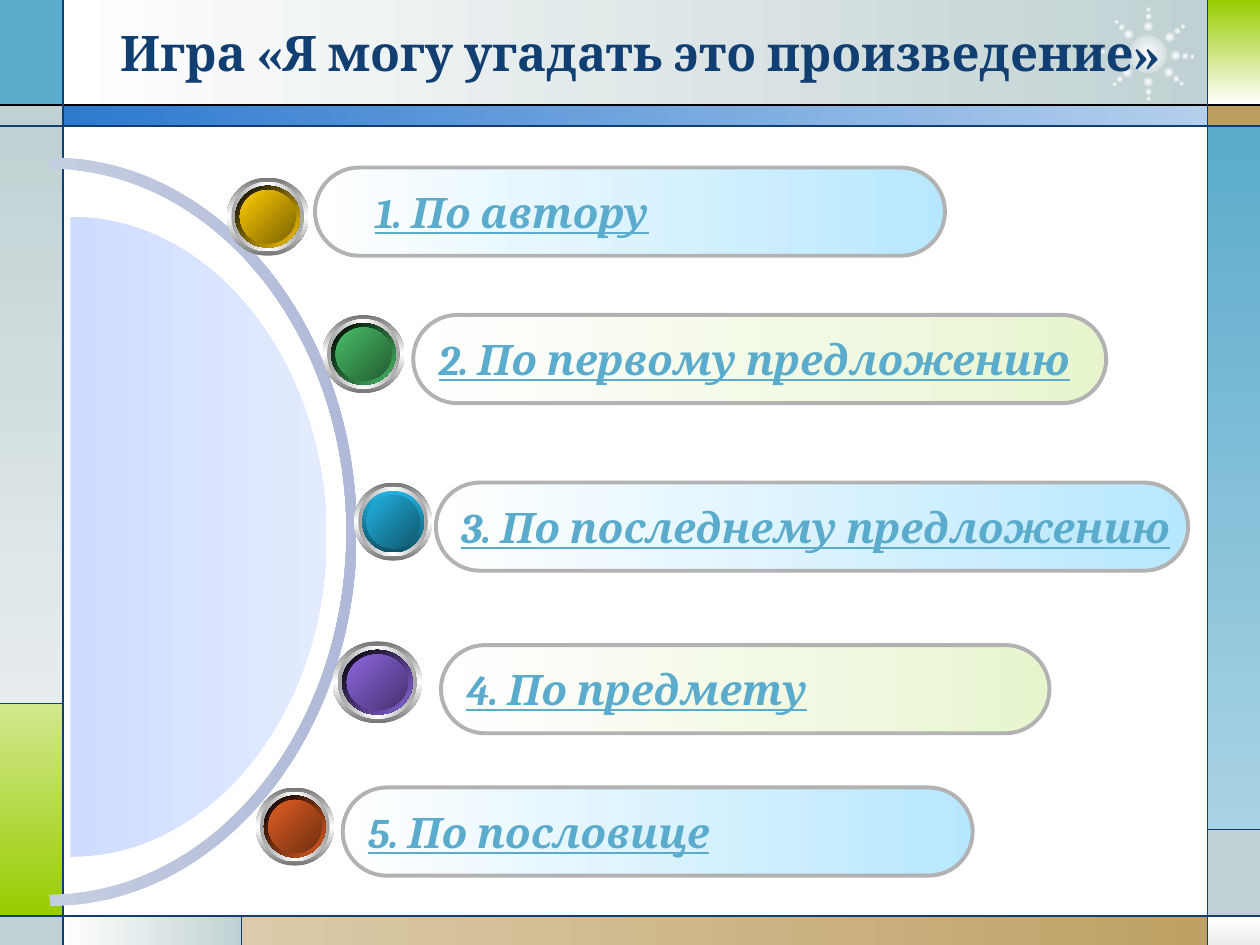
from dataclasses import dataclass
from math import cos, radians, sin
from lxml.etree import SubElement as Sub
from pptx import Presentation
from pptx.dml.color import RGBColor as RGB
from pptx.enum.shapes import MSO_CONNECTOR as Conn, MSO_SHAPE as Kind
from pptx.enum.text import MSO_ANCHOR as Anchor, MSO_AUTO_SIZE as Auto, PP_ALIGN as Align
from pptx.oxml.ns import qn
from pptx.util import Inches, Pt


@dataclass
class Theme:
    font: str = "Cambria"
    head: int = 28
    item: int = 24
    navy: str = "113F71"
    black: str = "000000"
    white: str = "FFFFFF"
    sky: str = "5AABCC"
    mist: str = "C1D1D3"
    lime: str = "99CC00"
    tan: str = "BD9E61"
    edge: str = "B2B2B2"
    ice: str = "B7E7FF"
    leaf: str = "E7F5CF"


look = Theme()
deck = Presentation()
deck.slide_width, deck.slide_height = Inches(10), Inches(7.5)
slide = deck.slides.add_slide(deck.slide_layouts[5])
shapes = slide.shapes

# Grid of 100 columns by 75 rows of square cells
COLS, ROWS = 100, 75
cell = deck.slide_width // COLS


def paint(shape, tones, turn=0):
    """Fill with one tone, or with even stops; turn None runs from the centre."""
    shape.shadow.inherit = False
    shape.line.fill.background()
    if len(tones) == 1:
        shape.fill.solid()
        shape.fill.fore_color.rgb = RGB.from_string(tones[0])
        return
    shape.fill.gradient()
    grad = shape._element.spPr.find(qn("a:gradFill"))
    for part in list(grad):
        grad.remove(part)
    stops = Sub(grad, qn("a:gsLst"))
    for i, tone in enumerate(tones):
        stop = Sub(stops, qn("a:gs"), pos=str(100000 * i // (len(tones) - 1)))
        Sub(stop, qn("a:srgbClr"), val=tone)
    if turn is None:
        way = Sub(grad, qn("a:path"), path="circle")
        Sub(way, qn("a:fillToRect"), l="50000", t="50000", r="50000", b="50000")
    else:
        Sub(grad, qn("a:lin"), ang=str(turn * 60000), scaled="0")


def draw(home, kind, x, y, wide, high, tones, turn=0):
    """Add a filled preset shape to the slide or a group, measured in cells."""
    box = [int(v * cell) for v in (x, y, wide, high)]
    shape = home.add_shape(kind, *box)
    paint(shape, tones, turn)
    return shape


# Frame of coloured blocks: left, top, right, bottom, tones, turn
left, right, top, band, foot = 5, 95.85, 8.33, 10, 72.7
split, step, drop = 19.17, 55.83, 65.83
blocks = [
    (left, 0, right, top, [look.white, look.mist], 0),
    (0, 0, left, top, [look.sky], 0),
    (0, top, left, band, [look.mist], 0),
    (0, band, left, step, [look.mist, "E7EDEE"], 90),
    (0, step, left, foot, ["D2E88F", look.lime], 90),
    (0, foot, left, ROWS, [look.mist], 0),
    (left, foot, split, ROWS, [look.white, look.mist], 0),
    (split, foot, COLS, ROWS, ["DBCBAA", look.tan], 0),
    (right, foot, COLS, ROWS, [look.white, "EDEDED"], 90),
    (right, drop, COLS, foot, [look.mist], 0),
    (right, band, COLS, drop, [look.sky, "AAD3E4"], 90),
    (right, top, COLS, band, [look.tan], 0),
    (right, 0, COLS, top, [look.lime, look.white], 90),
    (left, top, right, band, ["2D7ACF", "B5CFEC"], 0),
]
for x, y, end, low, tones, turn in blocks:
    draw(shapes, Kind.RECTANGLE, x, y, end - x, low - y, tones, turn)

# Star: a core and eight rays of shrinking dots
mid_x, mid_y = 91.1, 4.3
dots = [(0, 0, 3)]
for angle in (3, 41, 89, 138, 183, 226, 271, 322):
    a = radians(angle)
    for reach, size in ((2.2, 0.75), (2.98, 0.5), (3.55, 0.35)):
        dots.append((reach * cos(a), reach * sin(a), size))
star = shapes.add_group_shape().shapes
for dx, dy, size in dots:
    draw(star, Kind.OVAL, mid_x + dx - size / 2, mid_y + dy - size / 2, size, size,
         [look.white, look.mist], None)

# Frame lines
rules = [
    (0, top, COLS, top, look.black),
    (0, band, COLS, band, look.navy),
    (0, foot, COLS, foot, look.navy),
    (left, 0, left, ROWS, look.navy),
    (right, 0, right, ROWS, look.navy),
    (left, step, 0, step, look.navy),
    (split, foot, split, ROWS, look.navy),
    (right, drop, COLS, drop, look.navy),
]
for *ends, tone in rules:
    rule = shapes.add_connector(Conn.STRAIGHT, *[int(v * cell) for v in ends])
    rule.line.color.rgb = RGB.from_string(tone)
    rule.line.width = Pt(0.75)
    Sub(rule._element.spPr, qn("a:effectLst"))

# Half disc and half ring: arcs as pairs of Bezier curves, top to bottom
BEND = 0.55
arcs = []
for x, y, wide, high in ((5.6, 42.6, 20.3, 25.4), (4, 42.2, 24.3, 29.7),
                         (3.9, 42.2, 23.6, 28.8)):
    arcs.append([(x + wide * u, y + high * v) for u, v in (
        (0, -1), (BEND, -1), (1, -BEND), (1, 0), (1, BEND), (BEND, 1), (0, 1))])
disc, outer, inner = arcs
for points, tones in (
    (disc, ["CEDCFF", "E3EBFF"]),
    (outer + inner[::-1], ["C5CDE2", "B0BAD8"]),
):
    spots = [(x * cell, y * cell) for x, y in points]
    pen = shapes.build_freeform(*spots[0])
    pen.add_line_segments(spots[1:], close=True)
    shape = pen.convert_to_shape()
    paint(shape, tones)
    lines = list(shape._element.iter(qn("a:lnTo")))
    for start in range(0, len(points) - 1, 7):
        for first in (start, start + 3):
            trio = lines[first:first + 3]
            curve = trio[0].makeelement(qn("a:cubicBezTo"))
            trio[0].addprevious(curve)
            for line in trio:
                curve.append(line[0])
                line.getparent().remove(line)

# Balls: left, top, width, height, rim tones, rim turn, face tones
balls = [
    (18, 14.1, 6.5, 6.2, [look.black, "FFCC00"], 45, ["FFCC00", "7C6300"]),
    (25.6, 25, 6.5, 6.2, [look.black, "48BE67"], 45, ["48BE67", "235C32"]),
    (28.1, 38.3, 6.2, 6.2, ["21B3E1", "0F5368"], 90, ["21B3E1", "10576D"]),
    (26.4, 50.9, 7.1, 6.5, [look.black, "8D67E1"], 45, ["8D67E1", "45326D"]),
    (20.3, 62.5, 6.2, 6.2, [look.black, "E35E23"], 45, ["E35E23", "6E2E11"]),
]
for x, y, wide, high, rim, turn, face in balls:
    layers = [
        (1, ["767676", look.white, "767676"], 90),
        (0.89, ["A2A2A2", look.white, "A2A2A2"], 0),
        (0.79, rim, turn),
        (0.68, face, 45),
    ]
    ball = shapes.add_group_shape().shapes
    for share, tones, angle in layers:
        gap = (1 - share) / 2
        draw(ball, Kind.OVAL, x + gap * wide, y + gap * high, share * wide,
             share * high, tones, angle)

# Pills: left, top, width, text indent, end tone, label
pills = [
    (25, 13.3, 50, 3.75, look.ice, "1. По автору"),
    (32.8, 25, 55, 1, look.leaf, "2. По первому предложению"),
    (34.6, 38.3, 59.7, 1, look.ice, "3. По последнему предложению"),
    (35, 51.2, 48.3, 1, look.leaf, "4. По предмету"),
    (27.2, 62.5, 50, 1, look.ice, "5. По пословице"),
]
for x, y, wide, inset, tone, label in pills:
    pill = draw(shapes, Kind.ROUNDED_RECTANGLE, x, y, wide, 7, [look.white, tone])
    pill.adjustments[0] = 0.5
    pill.line.color.rgb = RGB.from_string(look.edge)
    pill.line.width = Pt(2.25)
    frame = pill.text_frame
    frame.word_wrap = False
    frame.vertical_anchor = Anchor.MIDDLE
    frame.margin_left = int(inset * cell)
    para = frame.paragraphs[0]
    para.text = label
    para.alignment = Align.LEFT
    font = para.font
    font.name, font.size = look.font, Pt(look.item)
    font.bold = font.italic = font.underline = True
    font.color.rgb = RGB.from_string(look.sky)

# Title, brought in front of the frame
title = shapes.title
title.left, title.top, title.width, title.height = [
    int(v * cell) for v in (5.9, 1.3, 89.8, 5.7)]
frame = title.text_frame
frame.word_wrap = True
frame.auto_size = Auto.SHAPE_TO_FIT_TEXT
frame.vertical_anchor = Anchor.MIDDLE
para = frame.paragraphs[0]
para.text = "Игра «Я могу угадать это произведение»"
para.alignment = Align.CENTER
font = para.font
font.name, font.size, font.bold = look.font, Pt(look.head), True
font.color.rgb = RGB.from_string(look.navy)
shapes._spTree.append(title._element)

deck.save("out.pptx")
